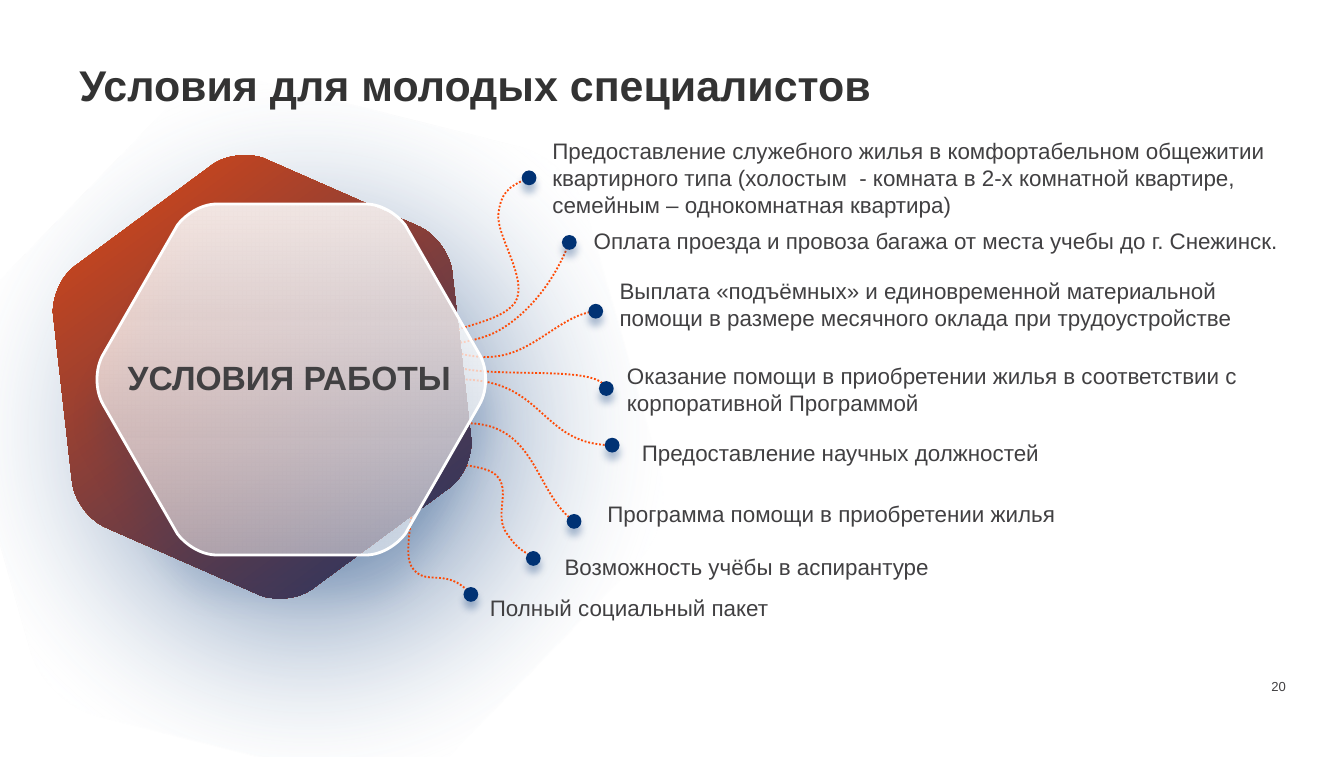
from lxml import etree
from pptx import Presentation
from pptx.dml.color import RGBColor
from pptx.enum.dml import MSO_LINE
from pptx.enum.shapes import MSO_SHAPE
from pptx.enum.text import MSO_ANCHOR, MSO_AUTO_SIZE, PP_ALIGN
from pptx.oxml.ns import qn
from pptx.util import Cm, Pt

DOTTED = MSO_LINE.ROUND_DOT
OVAL = MSO_SHAPE.OVAL
MIDDLE, BOTTOM = MSO_ANCHOR.MIDDLE, MSO_ANCHOR.BOTTOM
LEFT, CENTER, RIGHT = PP_ALIGN.LEFT, PP_ALIGN.CENTER, PP_ALIGN.RIGHT
NO_FIT = MSO_AUTO_SIZE.NONE

FONT = "Arial"
COLORS = {"navy": "003274", "orange": "FF4A05", "white": "FFFFFF",
          "mist": "F9F9F9", "title": "333333", "text": "414042"}
RGB = {name: RGBColor.from_string(value) for name, value in COLORS.items()}
DOT_SIZE = 0.28

# Each condition: text, number of lines, box left, top, width, and its branch
# (start point, then two control points and an end point per curve), in cm
CONDITIONS = [
    ("Предоставление служебного жилья в комфортабельном общежитии квартирного типа "
     "(холостым  - комната в 2-х комнатной квартире, семейным – однокомнатная квартира)",
     3, 10.19, 2.47, 14.15,
     [(7.8, 6.53), (8.41, 6.2), (9.45, 6.12), (9.73, 5.72), (10.01, 5.31),
      (9.37, 4.45), (9.42, 4.04), (9.47, 3.66), (9.58, 3.53), (10, 3.36)]),
    ("Оплата проезда и провоза багажа от места учебы до г. Снежинск.",
     1, 10.97, 4.17, 14.88,
     [(7.26, 6.76), (7.95, 6.48), (8.92, 6.58), (9.5, 6.2),
      (10.08, 5.84), (10.52, 5.21), (10.76, 4.58)]),
    ("Выплата «подъёмных» и единовременной материальной помощи в размере "
     "месячного оклада при трудоустройстве",
     2, 11.46, 5.11, 13.41,
     [(6.78, 6.53), (8.41, 6.4), (8.66, 6.83), (9.4, 6.73),
      (10.13, 6.63), (10.62, 5.94), (11.26, 5.88)]),
    ("Оказание помощи в приобретении жилья в соответствии с корпоративной Программой",
     2, 11.6, 6.71, 13.74,
     [(5.82, 6.5), (6.55, 6.5), (7.98, 6.83), (8.89, 6.99),
      (9.83, 7.11), (11.33, 6.93), (11.46, 7.34)]),
    ("Предоставление научных должностей", 1, 11.88, 8.18, 12.7,
     [(4.06, 7.52), (4.67, 7.47), (7.8, 7.04), (9.04, 7.19),
      (10.29, 7.34), (10.31, 8.41), (11.57, 8.41)]),
    ("Программа помощи в приобретении жилья", 1, 11.23, 9.32, 12.7,
     [(8.41, 8.03), (10.16, 7.75), (10.03, 9.25), (10.85, 9.85)]),
    ("Возможность учёбы в аспирантуре", 1, 10.42, 10.32, 12.7,
     [(7.75, 8.48), (8.2, 8.84), (9.07, 8.71), (9.37, 8.97), (9.68, 9.25),
      (9.32, 9.73), (9.58, 10.08), (9.83, 10.44), (9.86, 10.36), (10.08, 10.55)]),
    ("Полный социальный пакет", 1, 9.01, 11.1, 12.7,
     [(7.44, 8.61), (8.18, 8.76), (7.54, 10.26), (7.77, 10.69),
      (8.03, 11.13), (8.43, 10.67), (8.9, 11.23)]),
]

# Each hexagon: left, top, width, height, rotation, gradient stops (color, position, opacity)
HEXAGONS = {
    "halo": (-0.33, 1.24, 12.32, 13.82, 44.1, [("navy", 0, 100), ("white", 0.55, 0)]),
    "core": (1.17, 2.88, 7.57, 8.48, 53.6, [("orange", 0, 100), ("navy", 1, 100)]),
    "glass": (2.19, 3.46, 6.63, 7.42, 90, [("mist", 0, 90), ("white", 1, 53)]),
}

deck = Presentation()
deck.slide_width, deck.slide_height = Cm(25.4), Cm(14.3)
page = deck.slides.add_slide(deck.slide_layouts[5])


def add_curve(points, close=False):
    """Draw a chain of Bezier curves through points in cm."""
    points = [(Cm(x), Cm(y)) for x, y in points]
    builder = page.shapes.build_freeform(*points[0])
    builder.add_line_segments(points[3::3], close=close)
    shape = builder.convert_to_shape()
    shape.shadow.inherit = False
    path = shape._element.find(".//" + qn("a:path"))
    for index, straight in enumerate(path.findall(qn("a:lnTo"))):
        curve = etree.SubElement(path, qn("a:cubicBezTo"))
        for x, y in points[3 * index + 1:3 * index + 4]:
            etree.SubElement(curve, qn("a:pt"), x=str(x - shape.left), y=str(y - shape.top))
        path.replace(straight, curve)
    return shape


def add_shadow(shape, opacity, blur, distance):
    """Give a shape a navy shadow falling straight down."""
    shape.shadow.inherit = False
    effects = shape._element.spPr.find(qn("a:effectLst"))
    shadow = etree.SubElement(effects, qn("a:outerShdw"), blurRad=str(Pt(blur)),
                              dist=str(Pt(distance)), dir="5400000", rotWithShape="0")
    color = etree.SubElement(shadow, qn("a:srgbClr"), val=COLORS["navy"])
    etree.SubElement(color, qn("a:alpha"), val=str(opacity * 1000))


# Title
title = page.shapes.title
title.left, title.top, title.width, title.height = Cm(1.5), Cm(1.19), Cm(18.24), Cm(0.91)
frame = title.text_frame
frame.text = "Условия для молодых специалистов"
frame.auto_size = NO_FIT
frame.vertical_anchor = MIDDLE
frame.margin_left = frame.margin_right = frame.margin_top = frame.margin_bottom = 0
para = frame.paragraphs[0]
para.alignment = LEFT
para.line_spacing = 0.9
para.font.name, para.font.size, para.font.bold = FONT, Pt(23), True
para.font.color.rgb = RGB["title"]

# Dotted branches
for *_, branch in CONDITIONS:
    curve = add_curve(branch)
    curve.fill.background()
    curve.line.color.rgb = RGB["orange"]
    curve.line.width = Pt(1)
    curve.line.dash_style = DOTTED

# Rounded hexagon outline in unit coordinates: three corners, then their half turn
side = [(1, 0.69), (1, 0.73), (0.97, 0.77), (0.94, 0.79)]
tip = [(0.57, 0.98), (0.53, 1), (0.47, 1), (0.43, 0.98)]
corners = [side, tip, [(1 - x, y) for x, y in reversed(side)]]
corners += [[(1 - x, 1 - y) for x, y in corner] for corner in corners]
outline = [point for corner in corners for point in corner[:1] * 3 + corner[1:]][2:]

# Hexagons
for name, (left, top, width, height, rotation, stops) in HEXAGONS.items():
    hexagon = add_curve([(left + x * width, top + y * height) for x, y in outline], close=True)
    hexagon.rotation = rotation
    hexagon.line.fill.background()
    hexagon.fill.gradient()
    hexagon.fill.gradient_angle = 0
    gradient = hexagon._element.spPr.find(qn("a:gradFill"))
    for stop, (color, position, _) in zip(hexagon.fill.gradient_stops, stops):
        stop.color.rgb = RGB[color]
        stop.position = position
    for tint, (_, _, opacity) in zip(gradient.iter(qn("a:srgbClr")), stops):
        etree.SubElement(tint, qn("a:alpha"), val=str(opacity * 1000))
    if name == "halo":
        radial = etree.Element(qn("a:path"), path="circle")
        etree.SubElement(radial, qn("a:fillToRect"), l="50000", t="50000", r="50000", b="50000")
        gradient.replace(gradient.find(qn("a:lin")), radial)
        page.shapes._spTree.insert(2, hexagon._element)
    if name == "glass":
        hexagon.line.color.rgb = RGB["white"]
        hexagon.line.width = Pt(1.5)
        add_shadow(hexagon, 12, 15, 20)

# Dots at the branch ends
for *_, branch in CONDITIONS:
    x, y = branch[-1]
    dot = page.shapes.add_shape(OVAL, Cm(x - DOT_SIZE / 2), Cm(y - DOT_SIZE / 2),
                                Cm(DOT_SIZE), Cm(DOT_SIZE))
    dot.fill.solid()
    dot.fill.fore_color.rgb = RGB["navy"]
    dot.line.fill.background()
    add_shadow(dot, 30, 4, 4)

# Condition labels, hexagon caption and page number
labels = [(text, left, top, width, 0.76 + 0.52 * (lines - 1), 12, LEFT)
          for text, lines, left, top, width, _ in CONDITIONS]
labels.append(("УСЛОВИЯ РАБОТЫ", 1.37, 6.62, 8.2, 1.02, 18, CENTER))
labels.append(("20", 22.75, 12.73, 1.55, 0.38, 7, RIGHT))
for text, left, top, width, height, size, alignment in labels:
    box = page.shapes.add_textbox(Cm(left), Cm(top), Cm(width), Cm(height))
    frame = box.text_frame
    frame.word_wrap = True
    frame.text = text
    if alignment == RIGHT:
        frame.vertical_anchor = BOTTOM
        frame.margin_left = frame.margin_right = frame.margin_top = frame.margin_bottom = 0
    para = frame.paragraphs[0]
    para.alignment = alignment
    para.font.name, para.font.size, para.font.bold = FONT, Pt(size), alignment == CENTER
    para.font.color.rgb = RGB["text"]

deck.save("out.pptx")
